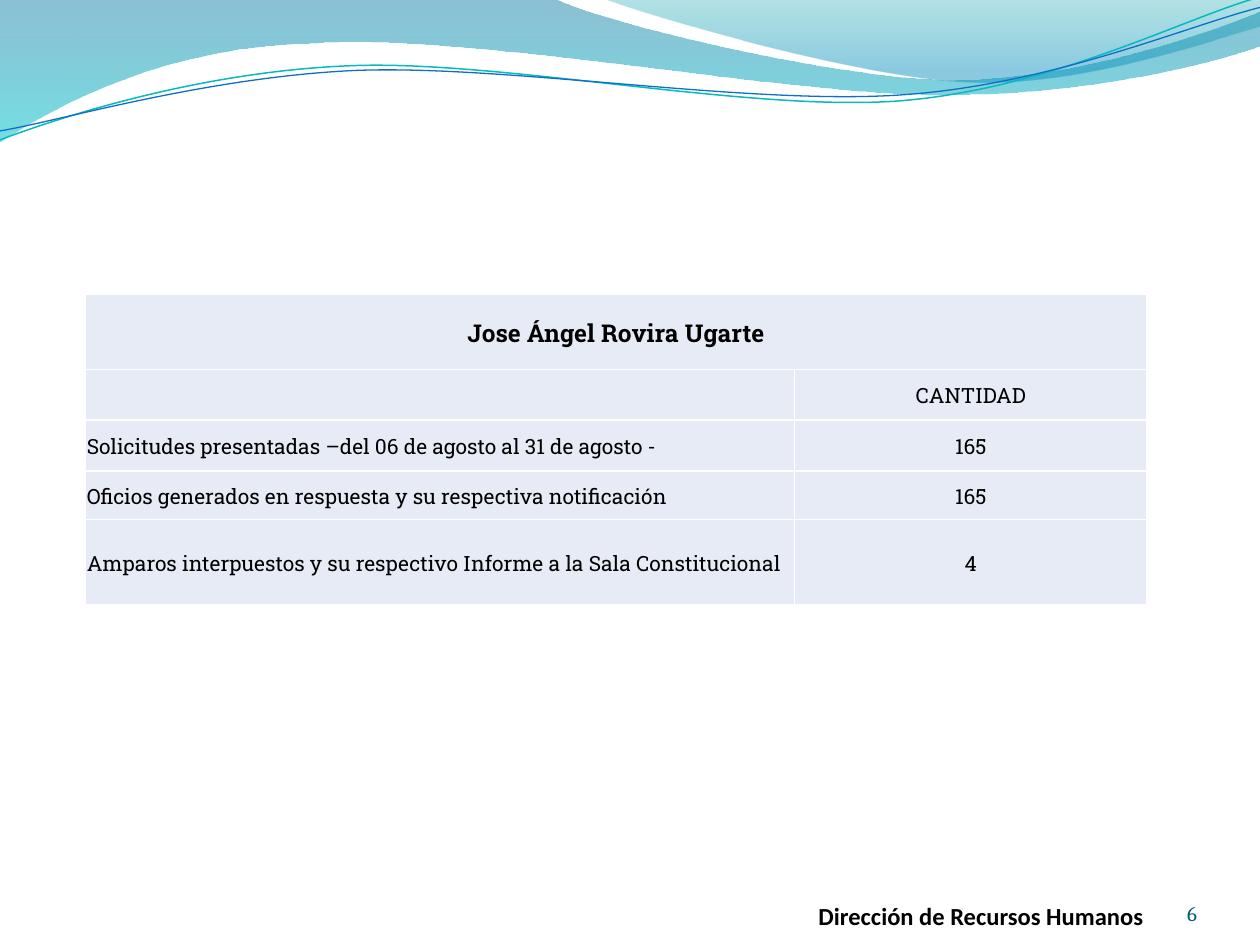
from dataclasses import dataclass
from typing import Optional

from pptx import Presentation
from pptx.dml.color import RGBColor
from pptx.enum.text import MSO_ANCHOR, PP_ALIGN
from pptx.oxml.ns import qn
from pptx.oxml.xmlchemy import OxmlElement
from pptx.util import Cm, Pt

WHITE = RGBColor(0xFF, 0xFF, 0xFF)
BLACK = RGBColor(0x00, 0x00, 0x00)
CELL = RGBColor(0xE7, 0xEB, 0xF5)
NUMBER = RGBColor(0x04, 0x5D, 0x75)
DEEP_BLUE = RGBColor(0x00, 0x74, 0xA1)
AQUA = RGBColor(0x00, 0xC6, 0xCF)
TEAL = RGBColor(0x00, 0xA1, 0xA9)
SKY = RGBColor(0x00, 0x8B, 0xBF)
LINE_TEAL = RGBColor(0x0A, 0xB8, 0xBF)
LINE_BLUE = RGBColor(0x0F, 0x6F, 0xC6)
LINE_ROTATION = 357.3


@dataclass
class Stop:
    position: float
    color: RGBColor
    opacity: int


@dataclass
class Wave:
    start: tuple
    segments: list
    stops: tuple = ()
    line: Optional[RGBColor] = None
    width: float = 0


@dataclass
class Label:
    text: str
    box: tuple
    font: str
    size: int
    color: RGBColor
    bold: bool = False
    align: PP_ALIGN = PP_ALIGN.LEFT
    top_inset: float = 0


WAVES = [
    Wave((0, 0), [
        ((11.18, -0.03),),
        ((12.09, 0.43), (16.87, 1.6), (19.25, 1.6)),
        ((21.67, 1.6), (24.33, 0.66), (25.4, 0.23)),
        ((25.43, 0.91),),
        ((24.97, 1.12), (22.1, 1.93), (18.95, 1.91)),
        ((15.8, 1.91), (9.7, 0.71), (6.53, 0.86)),
        ((3.28, 0.91), (1.17, 2.11), (-0.03, 2.87)),
        ((0, 0),),
    ], stops=(Stop(0, DEEP_BLUE, 45), Stop(1, AQUA, 55))),
    Wave((12.17, -0.03), [
        ((12.93, 0.28), (17.32, 1.57), (19.53, 1.65)),
        ((21.74, 1.75), (24.41, 0.81), (25.4, 0.53)),
        ((25.4, 0),),
        ((12.17, -0.03),),
    ], stops=(Stop(0, TEAL, 30), Stop(0.8, SKY, 45))),
    Wave((-0.05, 2.22), [
        ((1.19, 1.82), (4.02, 1.04), (7.05, 1.06)),
        ((10.05, 1.07), (15.02, 2.37), (18.08, 2.29)),
        ((21.13, 2.2), (23.87, 0.91), (25.41, 0.55)),
    ], line=LINE_TEAL, width=0.85),
    Wave((-0.04, 2.04), [
        ((1.16, 1.9), (4.18, 1.15), (7.2, 1.16)),
        ((10.25, 1.19), (15.13, 2.25), (18.18, 2.17)),
        ((21.21, 2.1), (23.93, 1.06), (25.45, 0.75)),
    ], line=LINE_BLUE, width=0.75),
]
LABELS = [
    Label("Dirección de Recursos Humanos", (16.5, 17.73, 7.59, 1.02),
          "Calibri", 14, BLACK, bold=True, top_inset=0.13),
    Label("6", (22.02, 17.65, 2.11, 1.02), "Cambria", 12, NUMBER,
          align=PP_ALIGN.RIGHT),
]
ROWS = [
    ("Jose Ángel Rovira Ugarte", ""),
    ("", "CANTIDAD"),
    ("Solicitudes presentadas –del 06 de agosto al 31 de agosto -", "165"),
    ("Oficios generados en respuesta y su respectiva notificación", "165"),
    ("Amparos interpuestos y su respectivo Informe a la Sala Constitucional", "4"),
]
ROW_HEIGHTS = (1.52, 1.02, 1.02, 0.98, 1.72)
COLUMN_WIDTHS = (14.3, 7.1)


def bend_segments(sp, segments: list) -> None:
    lines = iter(list(sp._element.spPr.iter(qn("a:lnTo"))))
    for segment in segments:
        first, *others = [next(lines) for _ in segment]
        if others:
            first.tag = qn("a:cubicBezTo")
        for line in others:
            first.append(line[0])
            line.getparent().remove(line)


def draw_wave(s, wave: Wave) -> None:
    builder = s.shapes.build_freeform(*map(Cm, wave.start))
    points = [(Cm(x), Cm(y)) for segment in wave.segments for x, y in segment]
    builder.add_line_segments(points, close=bool(wave.stops))
    sp = builder.convert_to_shape()
    bend_segments(sp, wave.segments)
    sp.shadow.inherit = False
    if wave.line is not None:
        sp.rotation = LINE_ROTATION
        sp.fill.background()
        sp.line.color.rgb = wave.line
        sp.line.width = Pt(wave.width)
        return
    sp.line.fill.background()
    sp.fill.gradient()
    sp.fill.gradient_angle = 270
    for target, stop in zip(sp.fill.gradient_stops, wave.stops):
        target.position = stop.position
        target.color.rgb = stop.color
    for color, stop in zip(sp._element.spPr.iter(qn("a:srgbClr")), wave.stops):
        alpha = OxmlElement("a:alpha")
        alpha.set("val", str(stop.opacity * 1000))
        color.append(alpha)


def set_text(tf, text: str, font: str, size: int, color: RGBColor,
             bold: bool, align: PP_ALIGN) -> None:
    p = tf.paragraphs[0]
    p.text = text
    p.alignment = align
    p.font.name = font
    p.font.size = Pt(size)
    p.font.bold = bold
    p.font.color.rgb = color


def draw_label(s, label: Label) -> None:
    tf = s.shapes.add_textbox(*map(Cm, label.box)).text_frame
    tf.word_wrap = True
    tf.vertical_anchor = MSO_ANCHOR.BOTTOM
    tf.margin_left = tf.margin_right = tf.margin_bottom = 0
    tf.margin_top = Cm(label.top_inset)
    set_text(tf, label.text, label.font, label.size, label.color,
             label.bold, label.align)


def add_borders(cell) -> None:
    tc_pr = cell._tc.get_or_add_tcPr()
    for i, side in enumerate(("a:lnL", "a:lnR", "a:lnT", "a:lnB")):
        ln = OxmlElement(side)
        ln.set("w", str(Pt(1)))
        fill = OxmlElement("a:solidFill")
        color = OxmlElement("a:srgbClr")
        color.set("val", str(WHITE))
        fill.append(color)
        ln.append(fill)
        tc_pr.insert(i, ln)


def draw_table(s) -> None:
    table = s.shapes.add_table(
        len(ROWS), len(COLUMN_WIDTHS), Cm(1.72), Cm(5.93),
        Cm(sum(COLUMN_WIDTHS)), Cm(sum(ROW_HEIGHTS))).table
    table.first_row = table.horz_banding = False
    for column, width in zip(table.columns, COLUMN_WIDTHS):
        column.width = Cm(width)
    for r, (texts, height) in enumerate(zip(ROWS, ROW_HEIGHTS)):
        table.rows[r].height = Cm(height)
        for c, text in enumerate(texts):
            cell = table.cell(r, c)
            cell.fill.solid()
            cell.fill.fore_color.rgb = CELL
            cell.vertical_anchor = MSO_ANCHOR.MIDDLE
            cell.margin_left = cell.margin_right = cell.margin_top = Cm(0.03)
            cell.margin_bottom = 0
            add_borders(cell)
            title = r == 0
            align = PP_ALIGN.CENTER if title or c == 1 else PP_ALIGN.LEFT
            if text:
                set_text(cell.text_frame, text, "Roboto Slab",
                         14 if title else 12, BLACK, title, align)
    table.cell(0, 0).merge(table.cell(0, 1))


def main() -> None:
    """Build the slide with its wave header, request table and footer."""
    prs = Presentation()
    prs.slide_width, prs.slide_height = Cm(25.4), Cm(19.05)
    s = prs.slides.add_slide(prs.slide_layouts[6])
    for wave in WAVES:
        draw_wave(s, wave)
    for label in LABELS:
        draw_label(s, label)
    draw_table(s)
    prs.save("out.pptx")


if __name__ == "__main__":
    main()
